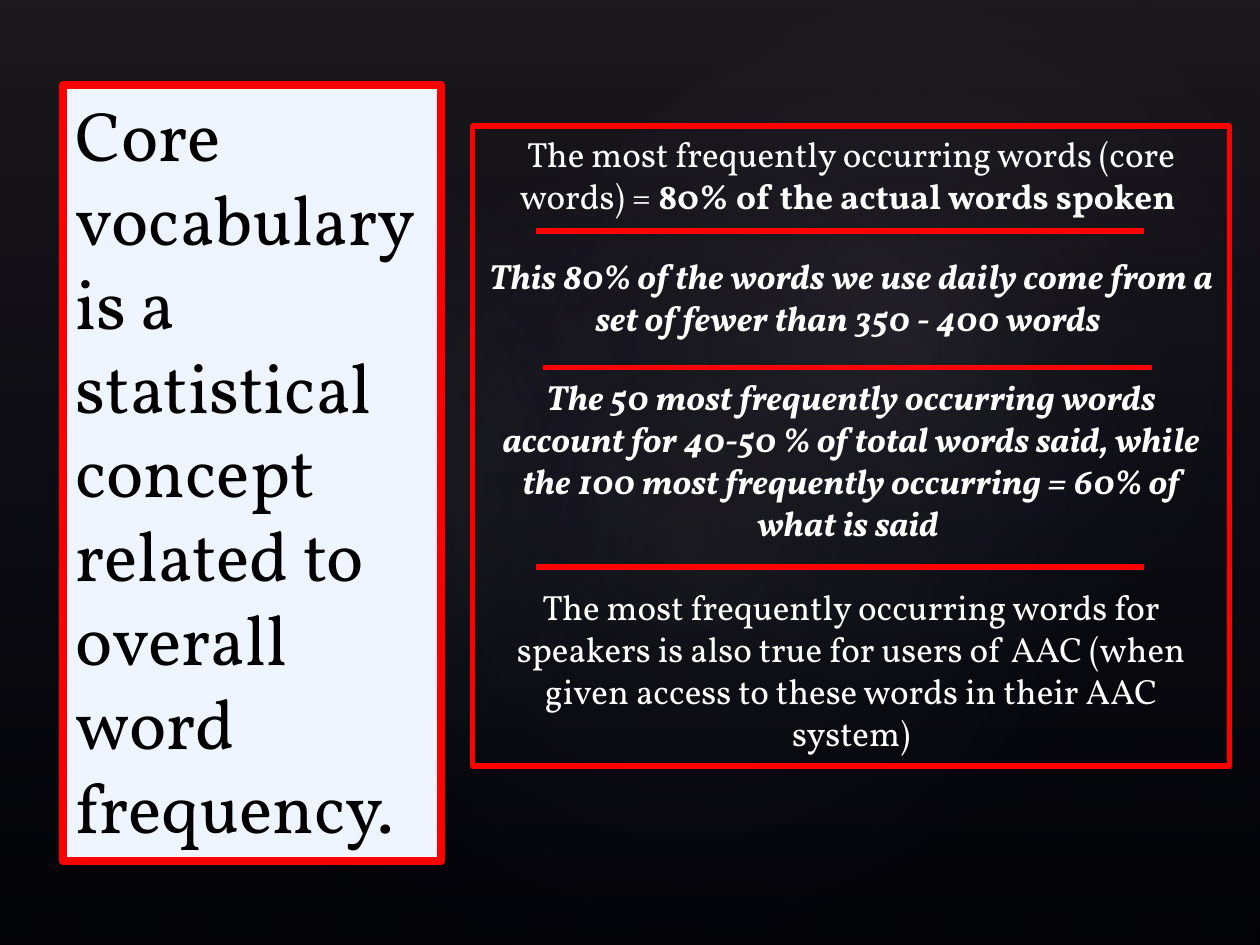
from dataclasses import dataclass

from lxml.etree import SubElement
from pptx import Presentation
from pptx.dml.color import RGBColor
from pptx.enum.shapes import MSO_CONNECTOR, MSO_SHAPE
from pptx.enum.text import MSO_ANCHOR, MSO_AUTO_SIZE, PP_ALIGN
from pptx.oxml import parse_xml
from pptx.oxml.ns import nsdecls, qn
from pptx.util import Pt


@dataclass(frozen=True)
class Theme:
    font: str = "Vollkorn"
    background: RGBColor = RGBColor(0, 0, 0)
    accent: RGBColor = RGBColor(255, 0, 0)
    panel: RGBColor = RGBColor(0xEE, 0xF5, 0xFE)
    title_text: RGBColor = RGBColor(0, 0, 0)
    body_text: RGBColor = RGBColor(255, 255, 255)
    title_size: float = 40
    body_size: float = 20
    thin: float = 3
    thick: float = 4.5


@dataclass(frozen=True)
class Frame:
    left: float
    top: float
    width: float
    height: float


@dataclass(frozen=True)
class Stop:
    position: int
    color: str
    alpha: int


@dataclass(frozen=True)
class Glow:
    frame: Frame
    rotation: float
    alpha: int


@dataclass(frozen=True)
class Span:
    text: str
    bold: bool = False


@dataclass(frozen=True)
class Fact:
    spans: tuple[Span, ...]
    space_before: float
    italic: bool = False


THEME = Theme()
SLIDE = Frame(0, 0, 720, 540)
TITLE_FRAME = Frame(36, 48.5, 216, 443.5)
BODY_FRAME = Frame(270.2, 72, 432.5, 365.8)
RULE_WIDTH = 348
RULE_STARTS = ((306, 132), (310.4, 210), (306, 324))

VEIL = (Stop(0, "504652", 36), Stop(100, "242852", 10))
GLOWS = (
    Glow(Frame(108, 82, 570, 449), 328.7, 7),
    Glow(Frame(-21.6, 92, 436, 353), 294.3, 8),
    Glow(Frame(258, 9.4, 510.5, 374.4), 328.7, 8),
)

TITLE_LINES = (
    "Core",
    "vocabulary is a statistical concept related to overall word",
    "frequency.",
)
FACTS = (
    Fact((Span("The most frequently occurring words (core words) = "),
          Span("80% of the actual words spoken ", bold=True)), 0),
    Fact((Span("This 80% of the words we use daily come from a set of fewer "
               "than 350 - 400 words ", bold=True),), 21.6, italic=True),
    Fact((Span("The 50 most frequently occurring words account for 40-50 % of "
               "total words said, while the 100 most frequently occurring = "
               "60% of what is said ", bold=True),), 21.4, italic=True),
    Fact((Span("The most frequently occurring words for speakers is also true "
               "for users of AAC (when given access to these words in their "
               "AAC system)"),), 24),
)


def place(box, frame: Frame) -> None:
    box.left, box.top = Pt(frame.left), Pt(frame.top)
    box.width, box.height = Pt(frame.width), Pt(frame.height)


def add_backdrop(page, kind: MSO_SHAPE, frame: Frame, stops: tuple[Stop, ...],
                 direction: str, rotation: float = 0) -> None:
    """Draw a translucent gradient shape behind the placeholders."""
    box = page.shapes.add_shape(kind, Pt(frame.left), Pt(frame.top),
                                Pt(frame.width), Pt(frame.height))
    box.rotation = rotation
    box.shadow.inherit = False
    box.line.fill.background()
    stop_xml = "".join(
        f'<a:gs pos="{stop.position * 1000}"><a:srgbClr val="{stop.color}">'
        f'<a:alpha val="{stop.alpha * 1000}"/></a:srgbClr></a:gs>'
        for stop in stops)
    gradient = parse_xml(f'<a:gradFill {nsdecls("a")} rotWithShape="1">'
                         f'<a:gsLst>{stop_xml}</a:gsLst>{direction}</a:gradFill>')
    box.element.spPr.find(qn("a:prstGeom")).addnext(gradient)
    page.shapes.title.element.addprevious(box.element)


def prepare_box(box, frame: Frame, line_width: float):
    """Place and outline a placeholder; return its text frame."""
    place(box, frame)
    box.line.color.rgb = THEME.accent
    box.line.width = Pt(line_width)
    text_frame = box.text_frame
    text_frame.word_wrap = True
    text_frame.auto_size = MSO_AUTO_SIZE.NONE
    text_frame.vertical_anchor = MSO_ANCHOR.TOP
    return text_frame


def add_paragraph(text_frame, index: int, alignment: PP_ALIGN, size: float,
                  color: RGBColor, space_before: float = 0):
    paragraph = text_frame.paragraphs[0] if index == 0 else text_frame.add_paragraph()
    paragraph.alignment = alignment
    paragraph.space_before = Pt(space_before)
    properties = paragraph._p.get_or_add_pPr()
    properties.set("marL", "0")
    properties.set("indent", "0")
    SubElement(properties, qn("a:buNone"))
    paragraph.font.name = THEME.font
    paragraph.font.size = Pt(size)
    paragraph.font.color.rgb = color
    return paragraph


def fill_title(box) -> None:
    text_frame = prepare_box(box, TITLE_FRAME, THEME.thick)
    box.fill.solid()
    box.fill.fore_color.rgb = THEME.panel
    for index, line in enumerate(TITLE_LINES):
        paragraph = add_paragraph(text_frame, index, PP_ALIGN.LEFT,
                                  THEME.title_size, THEME.title_text)
        paragraph.add_run().text = line


def fill_facts(box) -> None:
    text_frame = prepare_box(box, BODY_FRAME, THEME.thin)
    for index, fact in enumerate(FACTS):
        paragraph = add_paragraph(text_frame, index, PP_ALIGN.CENTER, THEME.body_size,
                                  THEME.body_text, fact.space_before)
        paragraph.font.italic = fact.italic
        for span in fact.spans:
            run = paragraph.add_run()
            run.text = span.text
            run.font.bold = span.bold


def add_rule(page, left: float, top: float) -> None:
    rule = page.shapes.add_connector(MSO_CONNECTOR.STRAIGHT, Pt(left), Pt(top),
                                     Pt(left + RULE_WIDTH), Pt(top))
    rule.line.color.rgb = THEME.accent
    rule.line.width = Pt(THEME.thin)
    SubElement(rule.element.spPr, qn("a:effectLst"))


def main() -> None:
    deck = Presentation()
    deck.slide_width, deck.slide_height = Pt(SLIDE.width), Pt(SLIDE.height)
    page = deck.slides.add_slide(deck.slide_layouts[1])
    page.background.fill.solid()
    page.background.fill.fore_color.rgb = THEME.background

    add_backdrop(page, MSO_SHAPE.RECTANGLE, SLIDE, VEIL, '<a:lin ang="5400000" scaled="0"/>')
    radial = ('<a:path path="circle"><a:fillToRect l="50000" t="50000" '
              'r="50000" b="50000"/></a:path>')
    for glow in GLOWS:
        stops = (Stop(0, "C4BCC6", glow.alpha), Stop(58, "242852", 0))
        add_backdrop(page, MSO_SHAPE.OVAL, glow.frame, stops, radial, glow.rotation)

    fill_title(page.shapes.title)
    fill_facts(page.placeholders[1])
    for left, top in RULE_STARTS:
        add_rule(page, left, top)
    deck.save("out.pptx")


if __name__ == "__main__":
    main()
